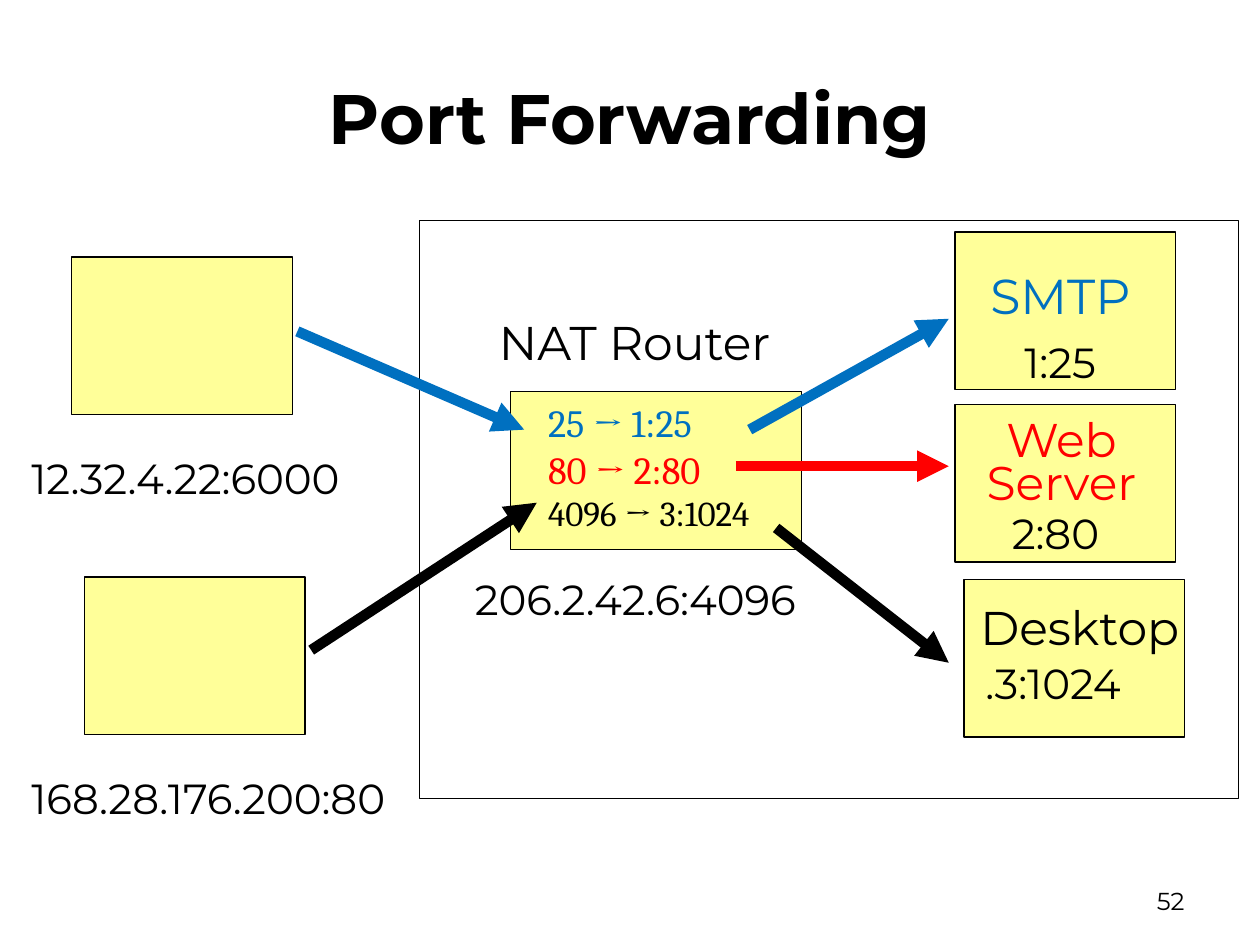
from dataclasses import dataclass
from typing import Optional

import pptx
import pptx.dml.color
import pptx.enum.dml
import pptx.enum.shapes
import pptx.enum.text
import pptx.oxml
import pptx.oxml.ns
import pptx.util
import lxml.etree

COLUMNS, ROWS = 100, 75
ALIGN = pptx.enum.text.PP_ALIGN
ANCHOR = pptx.enum.text.MSO_ANCHOR


@dataclass(frozen=True)
class Theme:
    font: str = "Montserrat"
    rule_font: str = "Cambria"
    ink: str = "000000"
    mail: str = "0070C0"
    web: str = "FF0000"
    box: str = "FFFF99"
    title: int = 40
    heading: int = 28
    name: int = 27
    address: int = 24
    rule: int = 22
    small_rule: int = 20
    number: int = 14
    outline: float = 0.75
    arrow: float = 6


@dataclass(frozen=True)
class Box:
    col: float
    row: float
    cols: float = 17.5
    rows: float = 12.5
    fill: Optional[str] = Theme.box


@dataclass(frozen=True)
class Label:
    text: str
    col: float
    row: float
    cols: float
    rows: float
    size: float = Theme.address
    color: str = Theme.ink
    inset: float = 0.1
    align: ALIGN = ALIGN.LEFT
    anchor: ANCHOR = ANCHOR.TOP
    spacing: Optional[float] = None


@dataclass(frozen=True)
class Arrow:
    start: tuple[float, float]
    end: tuple[float, float]
    color: str


@dataclass(frozen=True)
class Rule:
    text: str
    size: float
    color: str


T = Theme()

BOXES = [
    Box(6.7, 45.8),
    Box(40.5, 31.1, cols=23.1),
    Box(75.8, 32.1),
    Box(33.3, 17.5, 65, 45.9, fill=None),
    Box(75.8, 18.4),
    Box(76.5, 46),
    Box(5.7, 20.4),
]

LABELS = [
    Label("12.32.4.22:6000", 1.5, 35.4, 31.5, 5),
    Label("168.28.176.200:80", 1.5, 60.8, 31.5, 5),
    Label("206.2.42.6:4096", 36.7, 45, 30.8, 5),
    Label("1:25", 80.5, 26.3, 9.3, 4.9, inset=0.08),
    Label("2:80", 79.5, 39.9, 12.5, 4.9, inset=0.08),
    Label(".3:1024", 77.4, 51.8, 15.8, 4.9, inset=0.08),
    Label("NAT Router", 38.4, 24.3, 30.6, 5.8, T.name, inset=0.12),
    Label("SMTP", 77.4, 20.5, 15.8, 6.1, T.heading, T.mail, 0.12),
    Label("Web\vServer", 75.3, 33.1, 17.9, 8.1, T.name, T.web, 0.12,
          ALIGN.CENTER, spacing=24.5),
    Label("Desktop", 76.6, 46.9, 20.9, 5.8, T.name, inset=0.12),
    Label("52", 71.7, 69.5, 23.3, 4, T.number,
          align=ALIGN.RIGHT, anchor=ANCHOR.MIDDLE),
]

RULES = [
    Rule("25 → 1:25", T.rule, T.mail),
    Rule("80 → 2:80", T.rule, T.web),
    Rule("4096 → 3:1024", T.small_rule, T.ink),
]
RULE_AREA = Label("\v".join(rule.text for rule in RULES),
                  42.3, 31.1, 22.5, 12, inset=0.12)

ARROWS = [
    Arrow((61.6, 41.9), (75.3, 52.6), T.ink),
    Arrow((24.7, 51.6), (42.6, 39.9), T.ink),
    Arrow((23.6, 26.3), (41.6, 34.1), T.mail),
    Arrow((59.5, 34.1), (75.3, 25.3), T.mail),
    Arrow((58.4, 37), (75.3, 37), T.web),
]

prs = pptx.Presentation()
prs.slide_width = pptx.util.Inches(10)
prs.slide_height = pptx.util.Inches(7.5)


def x(col: float) -> int:
    return round(prs.slide_width * col / COLUMNS)


def y(row: float) -> int:
    return round(prs.slide_height * row / ROWS)


def rgb(color: str) -> pptx.dml.color.RGBColor:
    return pptx.dml.color.RGBColor.from_string(color)


def format_run(r, size: float, color: str, font: str = T.font) -> None:
    r.font.name = font
    r.font.size = pptx.util.Pt(size)
    r.font.color.rgb = rgb(color)


def draw_box(s, box: Box) -> None:
    sp = s.shapes.add_shape(pptx.enum.shapes.MSO_SHAPE.RECTANGLE,
                            x(box.col), y(box.row), x(box.cols), y(box.rows))
    sp.shadow.inherit = False
    if box.fill:
        sp.fill.solid()
        sp.fill.fore_color.rgb = rgb(box.fill)
    else:
        sp.fill.background()
    sp.line.color.rgb = rgb(T.ink)
    sp.line.width = pptx.util.Pt(T.outline)


def draw_label(s, label: Label):
    sp = s.shapes.add_textbox(x(label.col), y(label.row),
                              x(label.cols), y(label.rows))
    tf = sp.text_frame
    tf.word_wrap = True
    tf.vertical_anchor = label.anchor
    tf.margin_left = tf.margin_right = pptx.util.Inches(label.inset)
    tf.margin_top = tf.margin_bottom = pptx.util.Inches(label.inset / 2)
    p = tf.paragraphs[0]
    p.text = label.text
    p.alignment = label.align
    if label.spacing:
        p.line_spacing = pptx.util.Pt(label.spacing)
    for r in p.runs:
        format_run(r, label.size, label.color)
    return p


def draw_arrow(s, arrow: Arrow) -> None:
    sp = s.shapes.add_connector(pptx.enum.shapes.MSO_CONNECTOR.STRAIGHT,
                                x(arrow.start[0]), y(arrow.start[1]),
                                x(arrow.end[0]), y(arrow.end[1]))
    sp.line.color.rgb = rgb(arrow.color)
    sp.line.width = pptx.util.Pt(T.arrow)
    qn = pptx.oxml.ns.qn
    lxml.etree.SubElement(sp.line._get_or_add_ln(), qn("a:tailEnd"), type="triangle")
    lxml.etree.SubElement(sp._element.spPr, qn("a:effectLst"))


def draw_title(s, text: str) -> None:
    sp = s.shapes.title
    sp.left, sp.top, sp.width, sp.height = x(5), y(3), x(90), y(12.5)
    tf = sp.text_frame
    tf.text = text
    tf.vertical_anchor = ANCHOR.MIDDLE
    p = tf.paragraphs[0]
    p.alignment = ALIGN.CENTER
    format_run(p.runs[0], T.title, T.ink)
    p.runs[0].font.bold = True


def main() -> None:
    s = prs.slides.add_slide(prs.slide_layouts[5])
    draw_title(s, "Port Forwarding")
    for box in BOXES:
        draw_box(s, box)
    for label in LABELS:
        draw_label(s, label)
    for r, rule in zip(draw_label(s, RULE_AREA).runs, RULES):
        format_run(r, rule.size, rule.color, T.rule_font)
    for arrow in ARROWS:
        draw_arrow(s, arrow)
    prs.save("out.pptx")


if __name__ == "__main__":
    main()
